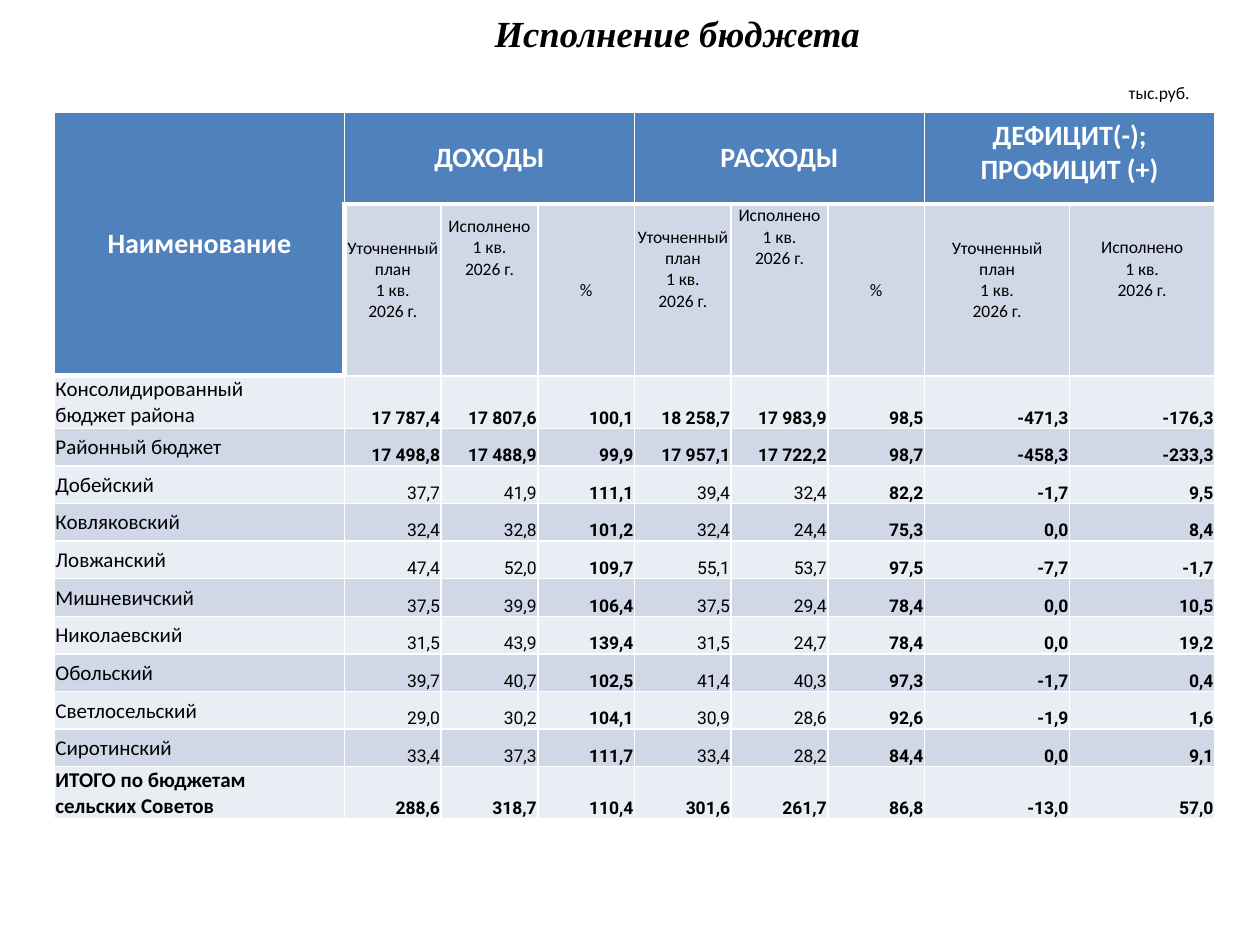
from pptx import Presentation
from pptx.dml.color import RGBColor
from pptx.enum.text import MSO_ANCHOR, PP_ALIGN
from pptx.oxml import parse_xml
from pptx.oxml.ns import nsdecls
from pptx.util import Pt

TITLE = "Исполнение бюджета"
UNIT = "тыс.руб."
NAME_HEADING = "Наименование"
GROUPS = [  # heading, number of columns, anchor
    ("ДОХОДЫ", 3, MSO_ANCHOR.MIDDLE),
    ("РАСХОДЫ", 3, MSO_ANCHOR.MIDDLE),
    ("ДЕФИЦИТ(-); ПРОФИЦИТ (+)", 2, MSO_ANCHOR.TOP),
]
PERIOD = ["1 кв.", "2026 г."]
PLAN = ["Уточненный", "план", *PERIOD]
DONE = ["Исполнено", *PERIOD]
SUBHEADINGS = [  # lines, number of line heights kept free below
    (["Уточненный план", *PERIOD], 1), (DONE, 4), (["%"], 0),
    (PLAN, 2), (DONE, 5), (["%"], 0),
    (PLAN, 1), (DONE, 2),
]
BUDGETS = [
    (["Консолидированный", "бюджет района"],
     ["17 787,4", "17 807,6", "100,1", "18 258,7", "17 983,9", "98,5", "-471,3", "-176,3"]),
    (["Районный бюджет"],
     ["17 498,8", "17 488,9", "99,9", "17 957,1", "17 722,2", "98,7", "-458,3", "-233,3"]),
    (["Добейский"], ["37,7", "41,9", "111,1", "39,4", "32,4", "82,2", "-1,7", "9,5"]),
    (["Ковляковский"], ["32,4", "32,8", "101,2", "32,4", "24,4", "75,3", "0,0", "8,4"]),
    (["Ловжанский"], ["47,4", "52,0", "109,7", "55,1", "53,7", "97,5", "-7,7", "-1,7"]),
    (["Мишневичский"], ["37,5", "39,9", "106,4", "37,5", "29,4", "78,4", "0,0", "10,5"]),
    (["Николаевский"], ["31,5", "43,9", "139,4", "31,5", "24,7", "78,4", "0,0", "19,2"]),
    (["Обольский"], ["39,7", "40,7", "102,5", "41,4", "40,3", "97,3", "-1,7", "0,4"]),
    (["Светлосельский"], ["29,0", "30,2", "104,1", "30,9", "28,6", "92,6", "-1,9", "1,6"]),
    (["Сиротинский"], ["33,4", "37,3", "111,7", "33,4", "28,2", "84,4", "0,0", "9,1"]),
    (["ИТОГО по бюджетам", "сельских Советов"],
     ["288,6", "318,7", "110,4", "301,6", "261,7", "86,8", "-13,0", "57,0"]),
]
LAST = len(BUDGETS) - 1
BOLD_ROWS = {0, 1, LAST}
BOLD_COLUMNS = {2, 5, 6, 7}

BLACK, WHITE, BLUE = "000000", "FFFFFF", "4F81BD"
BANDS = ["E9EDF4", "D0D8E8"]
GROUP_WIDTH = 165.8
LINE_HEIGHT = 12.2
HEADING_MARGINS = (7.2, 3.6, 7.2, 3.6)
CELL_MARGINS = (0.7, 0.7, 0.7, 0)


def color(value):
    return RGBColor.from_string(value)


def write(frame, lines, size=10, font="Calibri", fill=BLACK, bold=False,
          italic=False, align=PP_ALIGN.LEFT):
    for index, line in enumerate(lines):
        paragraph = frame.add_paragraph() if index else frame.paragraphs[0]
        paragraph.alignment = align
        run = paragraph.add_run()
        run.text = line
        run.font.size, run.font.name = Pt(size), font
        run.font.bold, run.font.italic = bold, italic
        run.font.color.rgb = color(fill)


def place(shape, left, top, width, height):
    shape.left, shape.top = Pt(left), Pt(top)
    shape.width, shape.height = Pt(width), Pt(height)


def make_line(tag, width, value):
    """Return a solid line element for a cell border or a text outline."""
    return parse_xml(f'<a:{tag} {nsdecls("a")} w="{Pt(width)}"><a:solidFill>'
                     f'<a:srgbClr val="{value}"/></a:solidFill></a:{tag}>')


def style_cell(cell, row, column):
    """Set the white borders, thick around the headings, and the fill."""
    thick = {
        "lnL": row == 1 and column == 1,
        "lnR": row == 1 and column == 0,
        "lnT": row == 1 or (row == 2 and column == 0),
        "lnB": row == 0 or (row == 1 and column == 0),
    }
    properties = cell._tc.get_or_add_tcPr()
    for tag, is_thick in thick.items():
        properties.append(make_line(tag, 3 if is_thick else 1, WHITE))
    is_heading = row == 0 or (row == 1 and column == 0)
    cell.fill.solid()
    cell.fill.fore_color.rgb = color(BLUE if is_heading else BANDS[row % 2])


def fill_cell(cell, lines, anchor=MSO_ANCHOR.MIDDLE, margins=CELL_MARGINS, **text_format):
    cell.vertical_anchor = anchor
    (cell.margin_left, cell.margin_top,
     cell.margin_right, cell.margin_bottom) = map(Pt, margins)
    write(cell.text_frame, lines, **text_format)


def add_budget_table(slide):
    widths = [GROUP_WIDTH] + [GROUP_WIDTH / count for _, count, _ in GROUPS for _ in range(count)]
    heights = [52.6, 96.5] + [29.6 if len(name) > 1 else 21.5 for name, _ in BUDGETS]
    table = slide.shapes.add_table(len(heights), len(widths), Pt(31), Pt(64.1),
                                   Pt(sum(widths)), Pt(sum(heights))).table
    for column, width in zip(table.columns, widths):
        column.width = Pt(width)
    for row, height in zip(table.rows, heights):
        row.height = Pt(height)
    for row in range(len(heights)):
        for column in range(len(widths)):
            style_cell(table.cell(row, column), row, column)

    heading = dict(margins=HEADING_MARGINS, size=16, fill=WHITE, bold=True, align=PP_ALIGN.CENTER)
    table.cell(0, 0).merge(table.cell(1, 0))
    fill_cell(table.cell(0, 0), [NAME_HEADING], **heading)
    first = 1
    for group, count, anchor in GROUPS:
        table.cell(0, first).merge(table.cell(0, first + count - 1))
        fill_cell(table.cell(0, first), [group], anchor, **heading)
        first += count

    for column, (lines, free) in enumerate(SUBHEADINGS, 1):
        fill_cell(table.cell(1, column), lines, align=PP_ALIGN.CENTER,
                  margins=(*CELL_MARGINS[:3], free * LINE_HEIGHT))

    for index, (name, values) in enumerate(BUDGETS):
        fill_cell(table.cell(index + 2, 0), name, size=12, bold=index == LAST)
        for column, value in enumerate(values):
            fill_cell(table.cell(index + 2, column + 1), [value], MSO_ANCHOR.BOTTOM,
                      font="Roboto", align=PP_ALIGN.RIGHT,
                      bold=index in BOLD_ROWS or column in BOLD_COLUMNS)


def add_title(slide):
    title = slide.shapes.title
    place(title, 56.2, 0, 661.7, 37.4)
    title.text_frame.vertical_anchor = MSO_ANCHOR.MIDDLE
    write(title.text_frame, [TITLE], size=21, font="Times New Roman", bold=True,
          italic=True, align=PP_ALIGN.CENTER)
    run = title.text_frame.paragraphs[0].runs[0]
    run._r.get_or_add_rPr().insert(0, make_line("ln", 0.75, BLACK))


def main():
    deck = Presentation()
    deck.slide_width, deck.slide_height = Pt(720), Pt(540)
    slide = deck.slides.add_slide(deck.slide_layouts[5])
    add_title(slide)
    add_budget_table(slide)
    unit = slide.shapes.add_textbox(Pt(637.9), Pt(43.2), Pt(49.7), Pt(19.4))
    unit.text_frame.word_wrap = False
    write(unit.text_frame, [UNIT])
    deck.save("out.pptx")


if __name__ == "__main__":
    main()
